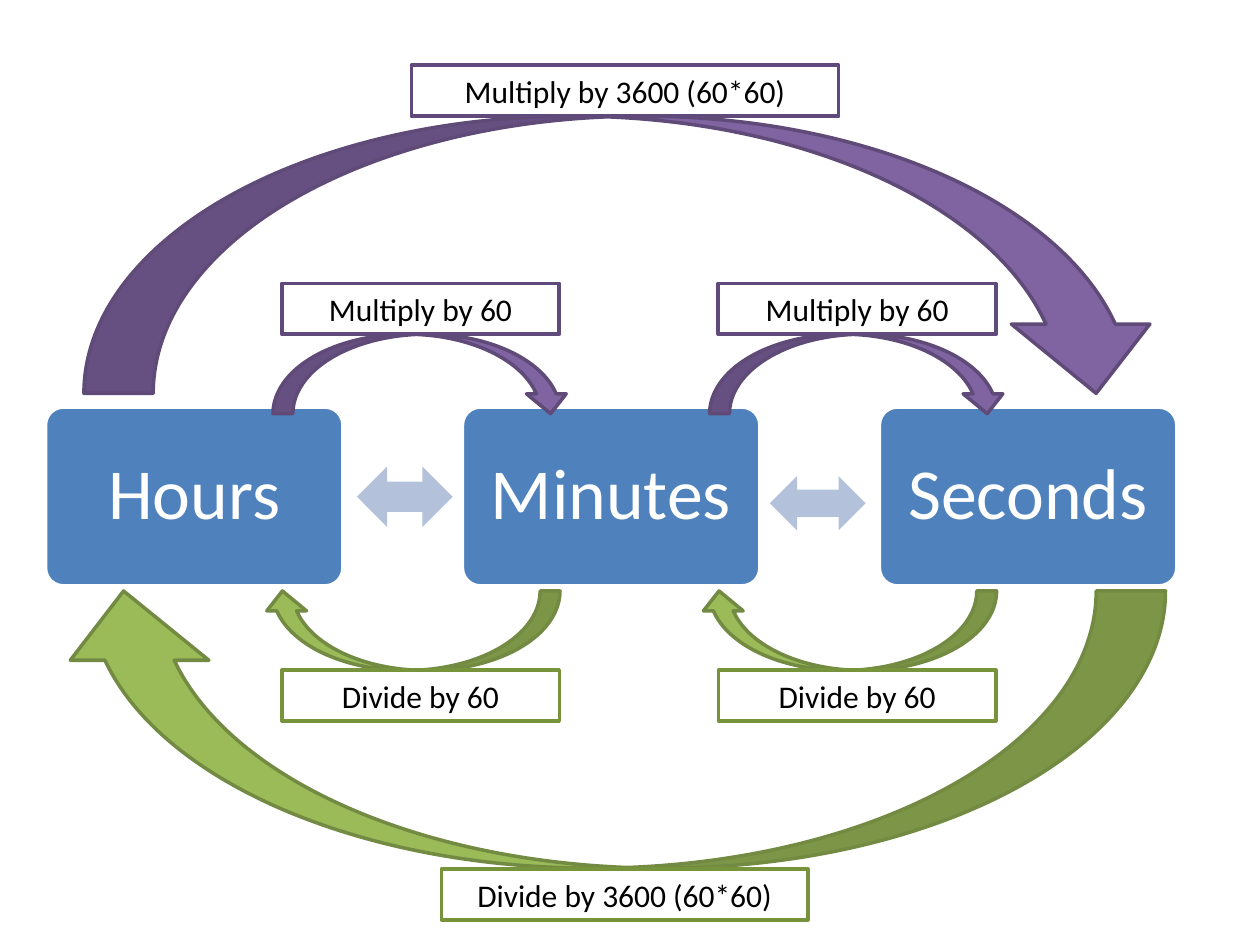
from pptx import Presentation
from pptx.dml.color import RGBColor
from pptx.enum.shapes import MSO_SHAPE
from pptx.enum.text import MSO_ANCHOR, PP_ALIGN
from pptx.util import Pt

PURPLE, PLUM, VIOLET = "8064A2", "5F4A78", "604A7B"
GREEN, OLIVE, MOSS = "9BBB59", "738A42", "77933C"
BLUE, PALE, WHITE, BLACK = "4F81BD", "B3C1DB", "FFFFFF", "000000"


def color(code):
    """Turn a hex string into a colour."""
    return RGBColor.from_string(code)


def draw(slide, kind, box, fill=None, line=None, width=2):
    """Add a flat shape in a box of left, top, width and height."""
    shape = slide.shapes.add_shape(kind, *(Pt(v) for v in box))
    shape.shadow.inherit = False
    if fill:
        shape.fill.solid()
        shape.fill.fore_color.rgb = color(fill)
    else:
        shape.fill.background()
    if line:
        shape.line.color.rgb = color(line)
        shape.line.width = Pt(width)
    else:
        shape.line.fill.background()
    return shape


def write(shape, text, size, ink):
    """Centre one line of text in a shape."""
    frame = shape.text_frame
    frame.text = text
    frame.word_wrap = True
    frame.vertical_anchor = MSO_ANCHOR.MIDDLE
    para = frame.paragraphs[0]
    para.alignment = PP_ALIGN.CENTER
    font = para.runs[0].font
    font.name, font.size = "Calibri", Pt(size)
    font.color.rgb = color(ink)
    return para


def units(slide, box):
    """Place the three unit boxes evenly, with double arrows between them."""
    left, top, width, height = box
    wide = 170
    step = (width - wide) / 2
    for i, name in enumerate(("Hours", "Minutes", "Seconds")):
        card = draw(slide, MSO_SHAPE.ROUNDED_RECTANGLE,
                    (left + i * step, top, wide, height), BLUE, WHITE)
        card.adjustments[0] = 0.1
        para = write(card, name, 41, WHITE)
        para.line_spacing = 0.9
        frame = card.text_frame
        frame.margin_left = frame.margin_right = Pt(12.3)
        frame.margin_top = frame.margin_bottom = Pt(12.3)
    for x, y, high in ((178, 34, 34.5), (414, 39.5, 31)):
        draw(slide, MSO_SHAPE.LEFT_RIGHT_ARROW,
             (left + x, top + y, 54.7, high), PALE)


def times(slide, arc, tag, text):
    """Place a multiply arrow with its label above."""
    draw(slide, MSO_SHAPE.CURVED_DOWN_ARROW, arc, PURPLE, PLUM)
    label = draw(slide, MSO_SHAPE.RECTANGLE, tag, None, VIOLET, 2.25)
    write(label, text, 18, BLACK)


def split(slide, arc, tag, text):
    """Place a divide arrow, turned round, with its label below."""
    arrow = draw(slide, MSO_SHAPE.CURVED_DOWN_ARROW, arc, GREEN, OLIVE)
    arrow.rotation = 180
    label = draw(slide, MSO_SHAPE.RECTANGLE, tag, WHITE, MOSS)
    write(label, text, 18, BLACK)


def main():
    """Build the time conversion slide."""
    deck = Presentation()
    deck.slide_width, deck.slide_height = Pt(720), Pt(540)
    slide = deck.slides.add_slide(deck.slide_layouts[6])
    units(slide, (26, 232.6, 646.5, 102.2))
    for x in (161, 410.5):
        times(slide, (x - 5, 191, 170, 45.4), (x, 162, 158.6, 29),
              "Multiply by 60")
        split(slide, (x - 11, 337.7, 170, 45.4), (x, 383, 158.6, 29),
              "Divide by 60")
    times(slide, (48, 66.4, 618, 158.4), (235.2, 37.4, 244, 29),
          "Multiply by 3600 (60*60)")
    split(slide, (31, 337.7, 635, 158.4), (252.2, 496.6, 209.5, 29),
          "Divide by 3600 (60*60)")
    deck.save("out.pptx")


if __name__ == "__main__":
    main()
